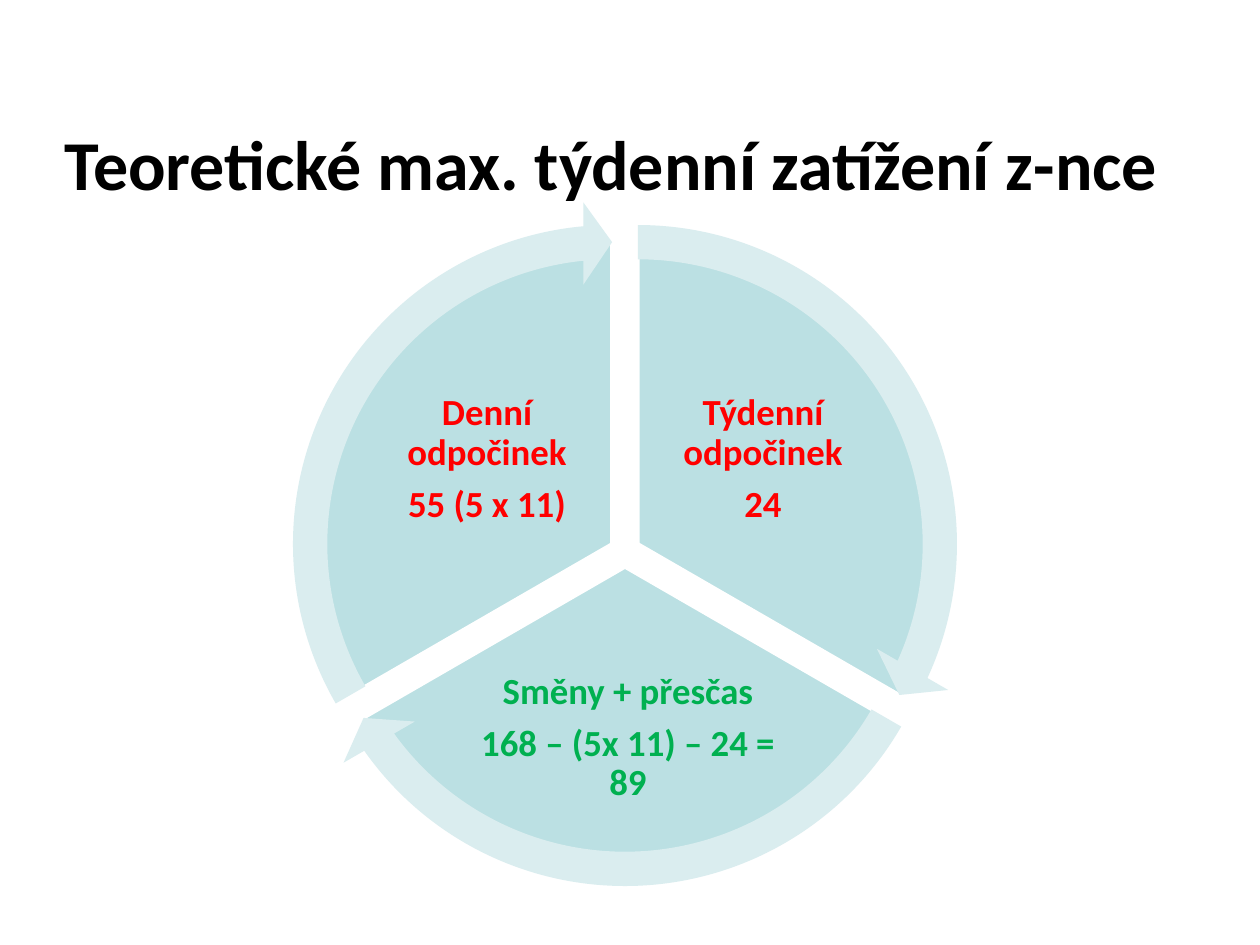
"""Build a slide with a three-part cycle of weekly rest and working hours."""
from pptx import Presentation
from pptx.dml.color import RGBColor
from pptx.enum.shapes import MSO_SHAPE
from pptx.enum.text import MSO_ANCHOR, PP_ALIGN
from pptx.util import Emu, Pt


def px(length):
    return Emu(round(length * 914400 / 126))


def color(value):
    return RGBColor.from_string(value)


PIE_SIZE = 610
ARROW_MARGIN = 38
ARROW_SIZE = PIE_SIZE + 2 * ARROW_MARGIN

presentation = Presentation()
presentation.slide_width = px(1260)
presentation.slide_height = px(945)
slide = presentation.slides.add_slide(presentation.slide_layouts[5])

heading = slide.shapes.title
heading.left, heading.top, heading.width, heading.height = px(15), px(115), px(1192), px(106)
heading.text_frame.text = "Teoretické max. týdenní zatížení z-nce"
heading.text_frame.vertical_anchor = MSO_ANCHOR.MIDDLE
heading_line = heading.text_frame.paragraphs[0]
heading_line.alignment = PP_ALIGN.CENTER
heading_line.line_spacing = 0.9
heading_line.font.name = "Calibri"
heading_line.font.size = Pt(40)
heading_line.font.bold = True
heading_line.font.color.rgb = color("000000")

sectors = [
    (333, 239, (162, 18), (14.73, 161.99), (654, 369, 218, 181), "FF0000",
     ["Týdenní odpočinek", "24"]),
    (320, 262, (18, 90), (86.72, 18.01), (465, 658, 326, 160), "00B050",
     ["Směny + přesčas", "168 – (5x 11) – 24 = 89"]),
    (307, 239, (90, 162), (158.73, 90), (378, 369, 218, 181), "FF0000",
     ["Denní odpočinek", "55 (5 x 11)"]),
]

cycle = slide.shapes.add_group_shape().shapes
for left, top, pie_angles, _, label_box, label_color, lines in sectors:
    sector = cycle.add_shape(MSO_SHAPE.PIE, px(left), px(top), px(PIE_SIZE), px(PIE_SIZE))
    sector.shadow.inherit = False
    sector.adjustments[0], sector.adjustments[1] = pie_angles
    sector.fill.solid()
    sector.fill.fore_color.rgb = color("BBE0E3")
    sector.line.color.rgb = color("FFFFFF")
    sector.line.width = Pt(2)

    label = cycle.add_textbox(*map(px, label_box)).text_frame
    label.word_wrap = True
    label.vertical_anchor = MSO_ANCHOR.MIDDLE
    label.margin_left = label.margin_right = label.margin_top = label.margin_bottom = px(4)
    label.text = "\n".join(lines)
    for paragraph in label.paragraphs:
        paragraph.alignment = PP_ALIGN.CENTER
        paragraph.line_spacing = 0.9
        paragraph.space_after = Pt(7)
        paragraph.font.name = "Calibri"
        paragraph.font.size = Pt(21)
        paragraph.font.bold = True
        paragraph.font.color.rgb = color(label_color)

for left, top, _, (end_angle, start_angle), *_ in sectors:
    arrow = cycle.add_shape(MSO_SHAPE.CIRCULAR_ARROW, px(left - ARROW_MARGIN),
                            px(top - ARROW_MARGIN), px(ARROW_SIZE), px(ARROW_SIZE))
    arrow.shadow.inherit = False
    for index, value in enumerate((0.05, 3.28, end_angle, start_angle, 0.06)):
        arrow.adjustments[index] = value
    arrow.fill.solid()
    arrow.fill.fore_color.rgb = color("DAEDEF")
    arrow.line.fill.background()

presentation.save("out.pptx")
